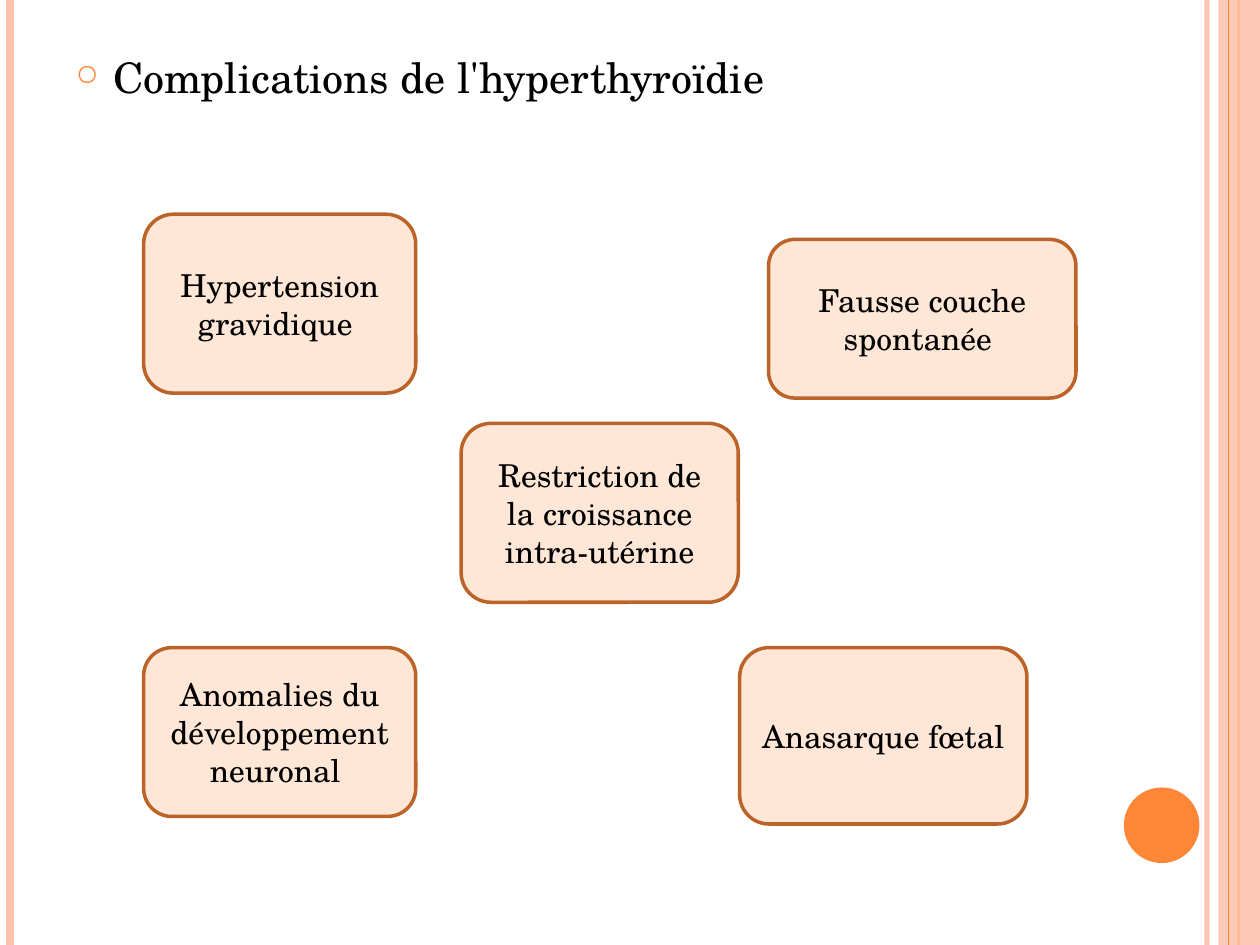
from dataclasses import dataclass

from lxml.etree import SubElement
from pptx import Presentation
from pptx.dml.color import RGBColor
from pptx.enum.shapes import MSO_CONNECTOR, MSO_SHAPE
from pptx.enum.text import MSO_ANCHOR, PP_ALIGN
from pptx.oxml.ns import qn
from pptx.util import Inches, Pt


@dataclass(frozen=True)
class Theme:
    """Colours, font and type sizes of the slide."""
    font: str = "TeX Gyre Schola"
    heading_size: int = 24
    card_size: int = 18
    ink: str = "000000"
    accent: str = "FE8637"
    pale: str = "FEC3AE"
    card_fill: str = "FFE7D7"
    card_border: str = "BC6329"


THEME = Theme()
WIDTH, HEIGHT = 10, 7.5
LEFT_COLUMN, LOWER_ROW = 1.14, 5.14
COMPLICATIONS = [
    ("Hypertension gravidique ", LEFT_COLUMN, 1.7, 2.16, 1.42),
    ("Anomalies du développement neuronal ", LEFT_COLUMN, LOWER_ROW, 2.16, 1.34),
    ("Fausse couche spontanée ", 6.1, 1.9, 2.44, 1.26),
    ("Restriction de la croissance intra-utérine", 3.66, 3.36, 2.2, 1.42),
    ("Anasarque fœtal", 5.87, LOWER_ROW, 2.28, 1.4),
]


def rgb(code):
    """Turn a hex code into a colour."""
    return RGBColor.from_string(code)


def set_alpha(fill, percent):
    """Make a solid fill partly transparent."""
    colour = fill._xPr.find(qn("a:solidFill"))[0]
    SubElement(colour, qn("a:alpha"), val=str(percent * 1000))


def style_text(paragraph, size, alignment):
    """Apply the theme's font to a paragraph."""
    paragraph.alignment = alignment
    paragraph.font.name = THEME.font
    paragraph.font.size = Pt(size)
    paragraph.font.bold = False
    paragraph.font.color.rgb = rgb(THEME.ink)


def add_stripe(slide, x, colour, weight, opacity=100):
    """Draw a vertical line over the full height."""
    stripe = slide.shapes.add_connector(
        MSO_CONNECTOR.STRAIGHT, Inches(x), 0, Inches(x), Inches(HEIGHT))
    stripe.line.color.rgb = rgb(colour)
    stripe.line.width = Pt(weight)
    if opacity < 100:
        set_alpha(stripe.line.fill, opacity)
    SubElement(stripe._element.spPr, qn("a:effectLst"))


def add_panel(slide, kind, box, colour, border=None):
    """Draw a filled shape, with a border if one is given."""
    panel = slide.shapes.add_shape(kind, *map(Inches, box))
    panel.shadow.inherit = False
    panel.fill.solid()
    panel.fill.fore_color.rgb = rgb(colour)
    if border:
        panel.line.color.rgb = rgb(border)
        panel.line.width = Pt(2)
    else:
        panel.line.fill.background()
    return panel


def add_decor(slide):
    """Draw the side stripes, the right band and the disc."""
    add_stripe(slide, 9.58, THEME.pale, 3, 93)
    add_stripe(slide, 0.08, THEME.pale, 4.5)
    add_stripe(slide, 9.83, THEME.accent, 1.5)
    band = add_panel(slide, MSO_SHAPE.RECTANGLE, (9.67, 0, 0.33, HEIGHT), THEME.pale)
    set_alpha(band.fill, 87)
    add_stripe(slide, 9.75, THEME.accent, 0.75)
    add_panel(slide, MSO_SHAPE.OVAL, (8.92, 6.25, 0.6, 0.6), THEME.accent)


def add_bullet(paragraph, indent):
    """Give a paragraph a hanging round bullet."""
    properties = paragraph._p.get_or_add_pPr()
    properties.set("marL", str(Inches(indent)))
    properties.set("indent", str(-Inches(indent)))
    colour = SubElement(properties, qn("a:buClr"))
    SubElement(colour, qn("a:srgbClr"), val=THEME.accent)
    SubElement(properties, qn("a:buSzPct"), val="70000")
    SubElement(properties, qn("a:buChar"), char="○")


def set_heading(slide, text):
    """Place the heading at the top left as a bulleted line."""
    heading = slide.shapes.title
    heading.left, heading.top = Inches(0.5), Inches(0.36)
    heading.width, heading.height = Inches(8.83), Inches(0.6)
    frame = heading.text_frame
    frame.text = text
    frame.word_wrap = True
    frame.vertical_anchor = MSO_ANCHOR.TOP
    add_bullet(frame.paragraphs[0], 0.3)
    style_text(frame.paragraphs[0], THEME.heading_size, PP_ALIGN.LEFT)


def add_card(slide, text, *box):
    """Add a rounded card naming one complication."""
    card = add_panel(slide, MSO_SHAPE.ROUNDED_RECTANGLE, box,
                     THEME.card_fill, THEME.card_border)
    frame = card.text_frame
    frame.text = text
    frame.word_wrap = True
    frame.vertical_anchor = MSO_ANCHOR.MIDDLE
    style_text(frame.paragraphs[0], THEME.card_size, PP_ALIGN.CENTER)


def main():
    """Build and save the slide."""
    deck = Presentation()
    deck.slide_width, deck.slide_height = Inches(WIDTH), Inches(HEIGHT)
    slide = deck.slides.add_slide(deck.slide_layouts[5])
    add_decor(slide)
    set_heading(slide, "Complications de l'hyperthyroïdie")
    for complication in COMPLICATIONS:
        add_card(slide, *complication)
    deck.save("out.pptx")


if __name__ == "__main__":
    main()
